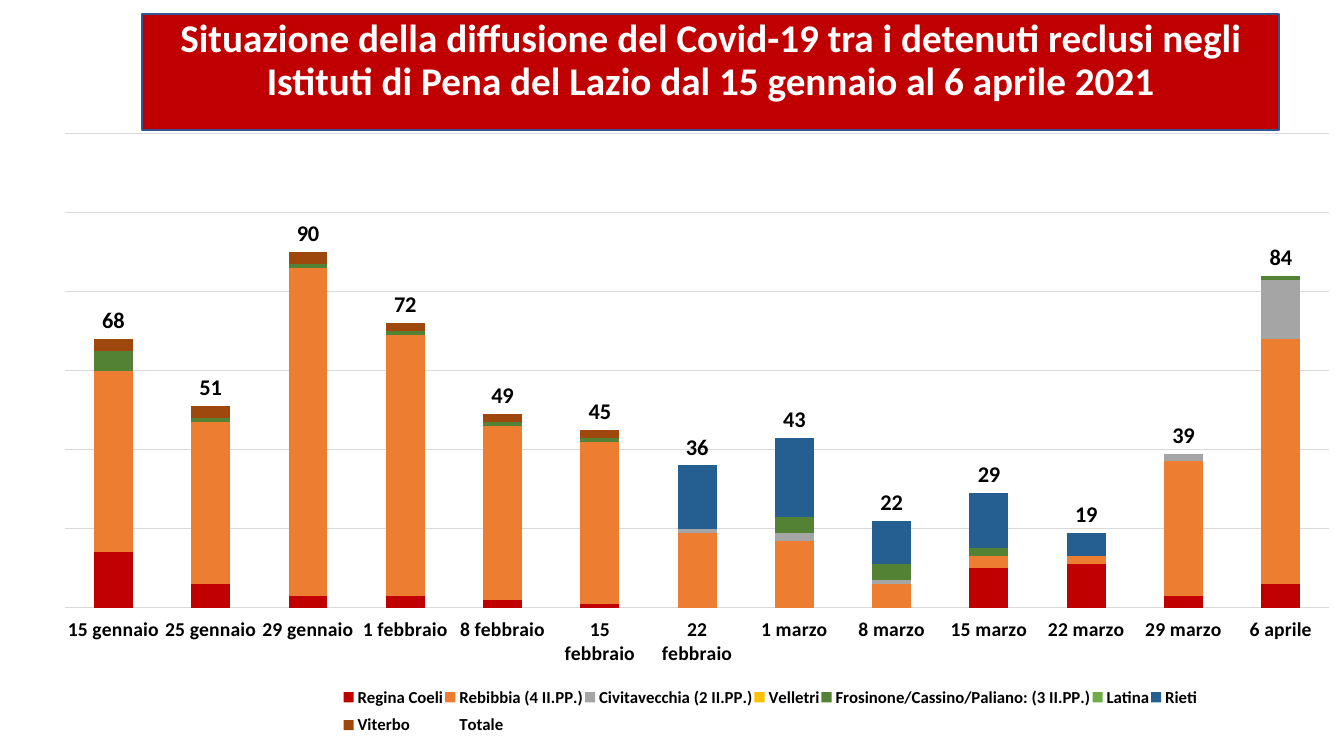
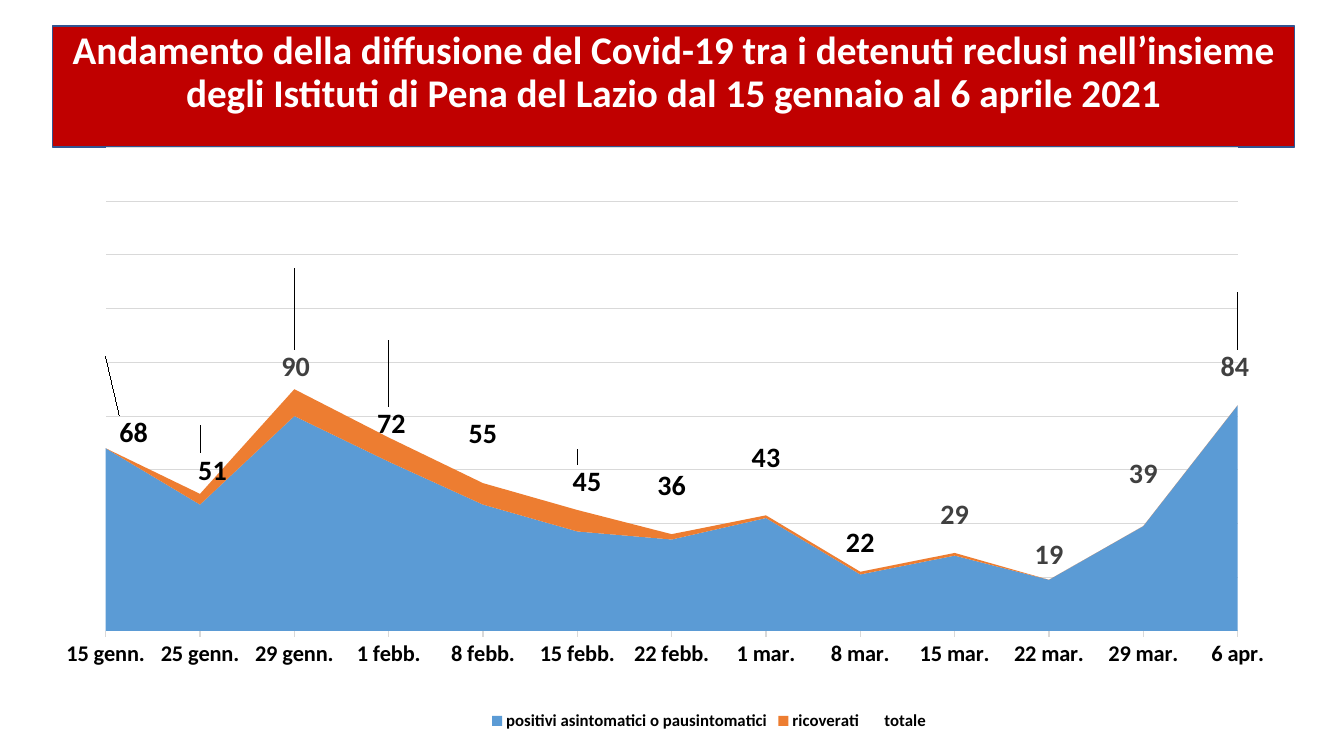
from dataclasses import dataclass, field
from typing import Any, Optional

from lxml import etree
from pptx import Presentation
from pptx.chart.data import CategoryChartData
from pptx.dml.color import RGBColor
from pptx.enum.chart import XL_CHART_TYPE as ChartType
from pptx.enum.chart import XL_LABEL_POSITION as LabelPosition
from pptx.enum.chart import XL_LEGEND_POSITION as LegendPosition
from pptx.enum.chart import XL_TICK_LABEL_POSITION as TickLabels
from pptx.enum.chart import XL_TICK_MARK as TickMark
from pptx.enum.text import MSO_ANCHOR as Anchor
from pptx.enum.text import MSO_AUTO_SIZE as AutoSize
from pptx.enum.text import PP_ALIGN as Align
from pptx.oxml.ns import qn
from pptx.util import Pt

# Shared style
FONT = "Calibri"
BLACK, WHITE, GREY = "000000", "FFFFFF", "404040"
BAND, BAND_EDGE, GRID = "C00000", "325491", "D9D9D9"
TITLE_ONLY = 5
BAND_FRAME = {
    "word_wrap": True, "auto_size": AutoSize.NONE, "vertical_anchor": Anchor.TOP,
    "margin_left": Pt(7.2), "margin_right": Pt(7.2),
    "margin_top": Pt(3.6), "margin_bottom": Pt(3.6),
}
BAND_PARAGRAPH = {"alignment": Align.CENTER, "line_spacing": 0.9, "space_before": Pt(10)}


@dataclass
class Box:
    left: float
    top: float
    width: float
    height: float

    def lengths(self) -> tuple:
        return tuple(Pt(n) for n in (self.left, self.top, self.width, self.height))


@dataclass
class Series:
    name: str
    values: list
    color: Optional[str] = None


@dataclass
class LabelShift:
    """Offset of one label, in points, with its colour."""
    point: int
    right: float = 0
    down: float = 0
    color: str = BLACK


@dataclass
class ChartPage:
    title: str
    band: Box
    chart: Box
    kind: Any
    categories: list
    series: list
    maximum: float
    tick: Any
    axis_size: float
    label_size: float
    label_color: str
    plot: Box
    legend: Optional[Box] = None
    label_position: Any = None
    shifts: list = field(default_factory=list)


def rgb(color: str) -> RGBColor:
    return RGBColor.from_string(color)


def apply(target: Any, values: dict) -> None:
    for name, value in values.items():
        setattr(target, name, value)


def style_font(font: Any, size: float, color: str = BLACK, bold: bool = True) -> None:
    apply(font, {"name": FONT, "size": Pt(size), "bold": bold})
    font.color.rgb = rgb(color)


def style_line(line: Any, color: str, width: float) -> None:
    line.color.rgb = rgb(color)
    line.width = Pt(width)


def set_layout(parent: Any, index: int, values: dict) -> None:
    """Give a chart part a manual layout."""
    for old in parent.findall(qn("c:layout")):
        parent.remove(old)
    layout = etree.Element(qn("c:layout"))
    manual = etree.SubElement(layout, qn("c:manualLayout"))
    for name, value in values.items():
        etree.SubElement(manual, qn(f"c:{name}")).set("val", str(value))
    parent.insert(index, layout)


def edge_layout(area: Box) -> dict:
    return {"xMode": "edge", "yMode": "edge", "x": area.left, "y": area.top,
            "w": area.width, "h": area.height}


def draw_band(slide: Any, page: ChartPage) -> None:
    band = slide.shapes.title
    names = ("left", "top", "width", "height")
    apply(band, dict(zip(names, page.band.lengths())))
    band.shadow.inherit = False
    band.fill.solid()
    band.fill.fore_color.rgb = rgb(BAND)
    style_line(band.line, BAND_EDGE, 1)
    apply(band.text_frame, BAND_FRAME)
    para = band.text_frame.paragraphs[0]
    apply(para, BAND_PARAGRAPH)
    span = para.add_run()
    span.text = page.title
    style_font(span.font, 28, WHITE)


def style_axes(chart: Any, page: ChartPage) -> None:
    dates = chart.category_axis
    apply(dates, {"major_tick_mark": page.tick, "minor_tick_mark": TickMark.NONE,
                  "tick_label_position": TickLabels.LOW, "has_major_gridlines": False})
    style_font(dates.tick_labels.font, page.axis_size)
    style_line(dates.format.line, GRID, 0.75)
    counts = chart.value_axis
    apply(counts, {"minimum_scale": 0, "maximum_scale": page.maximum, "major_unit": 20,
                   "has_major_gridlines": True, "visible": False})
    style_line(counts.major_gridlines.format.line, GRID, 0.75)


def label_totals(chart: Any, page: ChartPage) -> None:
    totals = chart.plots[0].series[len(page.series) - 1]
    labels = totals.data_labels
    labels.show_value = True
    style_font(labels.font, page.label_size, page.label_color)
    if page.label_position is not None:
        labels.position = page.label_position
    for shift in page.shifts:
        style_font(totals.points[shift.point].data_label.font, page.label_size, shift.color)
    for shift, label in zip(page.shifts, chart.element.xpath(".//c:dLbl")):
        set_layout(label, 1, {"x": shift.right / page.chart.width,
                              "y": shift.down / page.chart.height})


def draw_chart(slide: Any, page: ChartPage) -> None:
    data = CategoryChartData()
    data.categories = page.categories
    for item in page.series:
        data.add_series(item.name, item.values)
    chart = slide.shapes.add_chart(page.kind, *page.chart.lengths(), data).chart
    chart.has_title = False
    style_font(chart.font, 10, bold=False)

    # Series
    plot = chart.plots[0]
    plot.vary_by_categories = False
    if page.kind == ChartType.COLUMN_STACKED:
        apply(plot, {"gap_width": 150, "overlap": 100})
    for drawn, item in zip(plot.series, page.series):
        if item.color:
            drawn.format.fill.solid()
            drawn.format.fill.fore_color.rgb = rgb(item.color)
        else:
            drawn.format.fill.background()
        drawn.format.line.fill.background()
    style_axes(chart, page)
    label_totals(chart, page)

    # Legend and plot area
    chart.has_legend = True
    apply(chart.legend, {"position": LegendPosition.BOTTOM, "include_in_layout": False})
    style_font(chart.legend.font, 12)
    if page.legend:
        set_layout(chart.element.xpath(".//c:legend")[0], 1, edge_layout(page.legend))
    set_layout(chart.element.xpath(".//c:plotArea")[0], 0,
               {"layoutTarget": "inner", **edge_layout(page.plot)})


# Content
PAGES = [
    ChartPage(
        title="Situazione della diffusione del Covid-19 tra i detenuti reclusi negli "
              "Istituti di Pena del Lazio dal 15 gennaio al 6 aprile 2021",
        band=Box(101.5, 10, 812, 83),
        chart=Box(18, 84, 942, 456),
        kind=ChartType.COLUMN_STACKED,
        categories=["15 gennaio", "25 gennaio", "29 gennaio", "1 febbraio", "8 febbraio",
                    "15 febbraio", "22 febbraio", "1 marzo", "8 marzo", "15 marzo",
                    "22 marzo", "29 marzo", "6 aprile"],
        series=[
            Series("Regina Coeli", [14, 6, 3, 3, 2, 1, 0, 0, 0, 10, 11, 3, 6], "C00000"),
            Series("Rebibbia (4 II.PP.)",
                   [46, 41, 83, 66, 44, 41, 19, 17, 6, 3, 2, 34, 62], "ED7D31"),
            Series("Civitavecchia (2 II.PP.)",
                   [0, 0, 0, 0, 0, 0, 1, 2, 1, 0, 0, 2, 15], "A5A5A5"),
            Series("Velletri", [0] * 13, "FFC000"),
            Series("Frosinone/Cassino/Paliano: (3 II.PP.)",
                   [5, 1, 1, 1, 1, 1, 0, 4, 4, 2, 0, 0, 1], "548235"),
            Series("Latina", [0] * 13, "70AD47"),
            Series("Rieti", [0, 0, 0, 0, 0, 0, 16, 20, 11, 14, 6, 0, 0], "255E91"),
            Series("Viterbo", [3, 3, 3, 2, 2, 2, 0, 0, 0, 0, 0, 0, 0], "9E480E"),
            Series("Totale", [68, 51, 90, 72, 49, 45, 36, 43, 22, 29, 19, 39, 84]),
        ],
        maximum=120, tick=TickMark.NONE, axis_size=14,
        label_size=16, label_color=BLACK, label_position=LabelPosition.INSIDE_BASE,
        plot=Box(0.03, 0.025, 0.959, 0.743),
        legend=Box(0.24, 0.88, 0.65, 0.1),
    ),
    ChartPage(
        title="Andamento della diffusione del Covid-19 tra i detenuti reclusi nell’insieme "
              "degli Istituti di Pena del Lazio dal 15 gennaio al 6 aprile 2021",
        band=Box(37.5, 18.5, 887, 86.5),
        chart=Box(38, 105, 937, 420),
        kind=ChartType.AREA_STACKED,
        categories=["15 genn.", "25 genn.", "29 genn.", "1 febb.", "8 febb.", "15 febb.",
                    "22 febb.", "1 mar.", "8 mar.", "15 mar.", "22 mar.", "29 mar.",
                    "6 apr."],
        series=[
            Series("positivi asintomatici o pausintomatici",
                   [68, 47, 80, 63, 47, 37, 34, 42, 21, 28, 19, 39, 84], "5B9BD5"),
            Series("ricoverati", [0, 4, 10, 9, 8, 8, 2, 1, 1, 1, 0, 0, None], "ED7D31"),
            Series("totale", [68, 51, 90, 72, 55, 45, 36, 43, 22, 29, 19, 39, 84]),
        ],
        maximum=180, tick=TickMark.OUTSIDE, axis_size=16,
        label_size=20, label_color=GREY,
        plot=Box(0.04, 0.001, 0.863, 0.822),
        shifts=[
            LabelShift(0, 20, 54), LabelShift(1, 9, 32), LabelShift(2, 1, 70, GREY),
            LabelShift(3, 2, 59), LabelShift(4, 0, 17), LabelShift(5, 7, 23),
            LabelShift(6), LabelShift(7), LabelShift(8), LabelShift(12, -2, 53, GREY),
        ],
    ),
]


def main() -> None:
    deck = Presentation()
    apply(deck, {"slide_width": Pt(960), "slide_height": Pt(540)})
    for page in PAGES:
        slide = deck.slides.add_slide(deck.slide_layouts[TITLE_ONLY])
        draw_band(slide, page)
        draw_chart(slide, page)
    deck.save("out.pptx")


if __name__ == "__main__":
    main()
